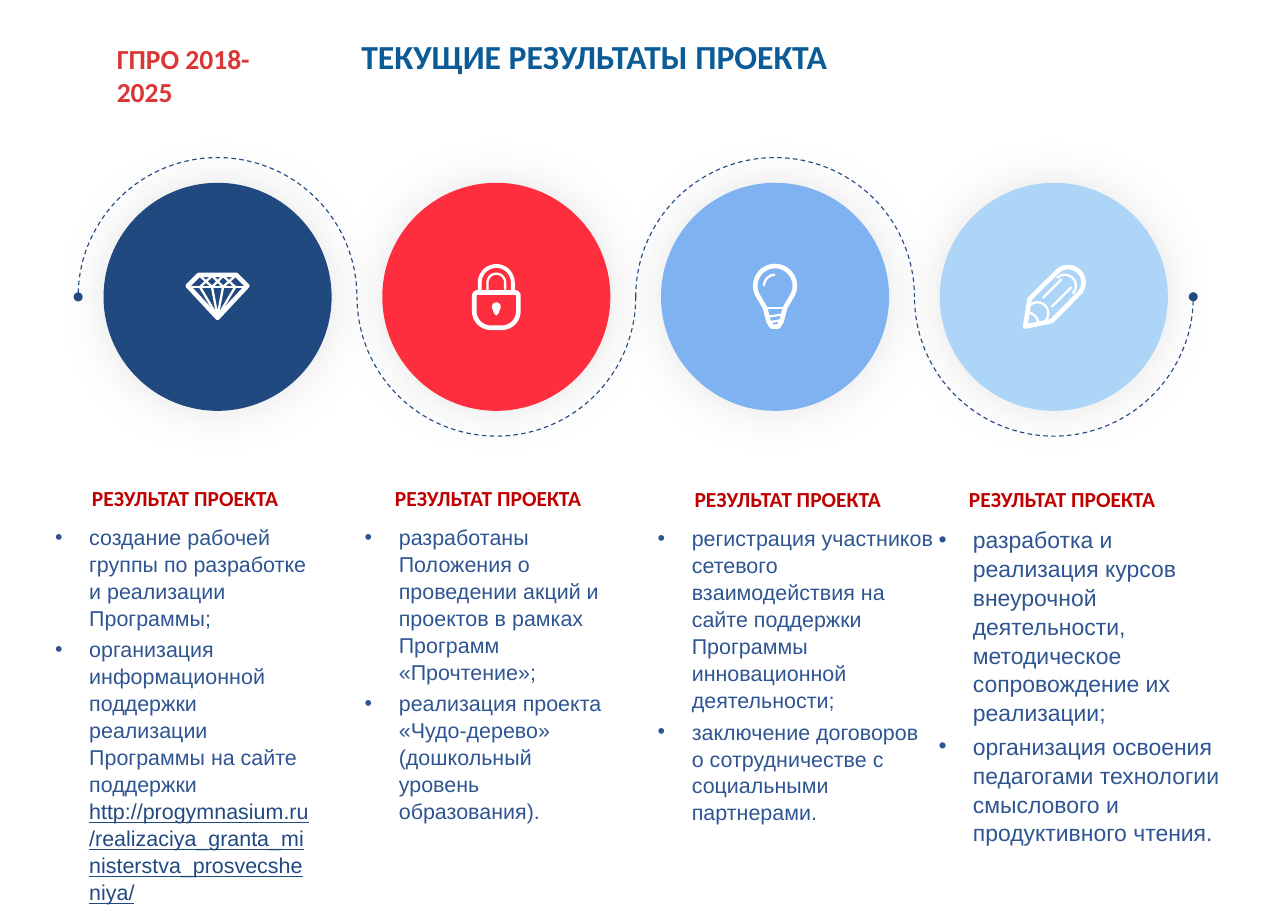
from math import cos, radians, sin

from lxml import etree
from pptx import Presentation
from pptx.dml.color import RGBColor
from pptx.enum.dml import MSO_LINE
from pptx.enum.shapes import MSO_SHAPE
from pptx.enum.text import MSO_ANCHOR, PP_ALIGN
from pptx.oxml.ns import qn
from pptx.util import Inches, Pt

ARC, OVAL = MSO_SHAPE.ARC, MSO_SHAPE.OVAL
DASH = MSO_LINE.DASH
LEFT, CENTER = PP_ALIGN.LEFT, PP_ALIGN.CENTER
TOP, MIDDLE = MSO_ANCHOR.TOP, MSO_ANCHOR.MIDDLE

WHITE = RGBColor(0xFF, 0xFF, 0xFF)
RED = RGBColor(0xD9, 0x36, 0x35)
DARK_RED = RGBColor(0xC0, 0x00, 0x00)
TITLE_BLUE = RGBColor(0x0B, 0x5B, 0x97)
TEXT_BLUE = RGBColor(0x2E, 0x55, 0x92)
LINE_BLUE = RGBColor(0x1D, 0x47, 0x7F)
NAVY = RGBColor(0x20, 0x49, 0x7F)
CORAL = RGBColor(0xFE, 0x2E, 0x3E)
BLUE = RGBColor(0x7F, 0xB2, 0xF0)
PALE_BLUE = RGBColor(0xAD, 0xD5, 0xF7)
SHADOW = RGBColor(0xBF, 0xBF, 0xBF)

PITCH = 2.53
CIRCLE = 2.07
THICK, MEDIUM, THIN = 3, 2.5, 1.5
URL = "http://progymnasium.ru/realizaciya_granta_ministerstva_prosvecsheniya/"

COLUMNS = [
    (0.39, 4.35, 2.53, 2.54, 0.31, 14, [
        "создание рабочей группы по разработке и реализации Программы;",
        "организация информационной поддержки реализации Программы на сайте поддержки " + URL]),
    (3.14, 4.35, 2.51, 3.06, 0.37, 14, [
        "разработаны Положения о проведении акций и проектов в рамках Программ «Прочтение»;",
        "реализация проекта «Чудо-дерево» (дошкольный уровень образования)."]),
    (5.86, 4.36, 2.73, 2.45, 0.31, 14, [
        "регистрация участников сетевого взаимодействия на сайте поддержки Программы "
        "инновационной деятельности;",
        "заключение договоров о сотрудничестве с социальными партнерами."]),
    (8.35, 4.36, 2.89, 2.69, 0.37, 15, [
        "разработка и реализация курсов внеурочной деятельности, методическое "
        "сопровождение их реализации;",
        "организация освоения педагогами технологии смыслового и продуктивного чтения."]),
]


def curve(x, y, radius, start, end, steps=24):
    """Return points along a circular arc, with angles clockwise from the right."""
    angles = [radians(start + (end - start) * step / steps) for step in range(steps + 1)]
    return [(x + radius * cos(angle), y + radius * sin(angle)) for angle in angles]


def diamond():
    """Return the strokes of the diamond as points, width and closed flag."""
    crown = [(-0.16, -0.19), (-0.05, -0.09), (0.05, -0.19), (0.16, -0.09)]
    return [
        ([(-0.27, -0.1), (-0.17, -0.2), (0.17, -0.2), (0.27, -0.1), (0, 0.19)], THICK, True),
        ([(-0.25, -0.09), (0.25, -0.09)], THIN, False),
        (crown, THIN, False),
        ([(-x, y) for x, y in crown], THIN, False),
        *[([(-x, -0.09), (0, 0.18), (x, -0.09)], THIN, False) for x in (0.05, 0.16)],
    ]


def padlock():
    """Return the strokes of the padlock."""
    body = (curve(-0.17, -0.01, 0.03, 180, 270) + curve(0.17, -0.01, 0.03, 270, 360)
            + curve(0.05, 0.13, 0.15, 0, 90) + curve(-0.05, 0.13, 0.15, 90, 180))
    shackles = [([(-radius, -0.05), *curve(0, -0.13, radius, 180, 360), (radius, -0.05)], width, False)
                for radius, width in ((0.15, MEDIUM), (0.08, THIN))]
    return [(body, THICK, True), *shackles]


def keyhole():
    """Return the outline of the keyhole."""
    return curve(0, 0.09, 0.04, 160, 380) + [(0.02, 0.15), (0, 0.17), (-0.02, 0.15)]


def bulb():
    """Return the strokes of the light bulb."""
    outline = curve(0, -0.1, 0.18, 145, 395) + [
        (0.09, 0.1), (0.06, 0.22), (0.03, 0.27), (-0.03, 0.27), (-0.06, 0.22), (-0.09, 0.1)]
    return [
        (outline, THICK, True),
        (curve(0, -0.1, 0.1, 180, 270), THIN, False),
        ([(-0.09, 0.1), (0.09, 0.1)], THIN, False),
        ([(-0.07, 0.18), (0.07, 0.16)], THIN, False),
        ([(-0.05, 0.23), (0.06, 0.21)], THIN, False),
    ]


def pencil():
    """Return the strokes of the pencil."""
    outline = curve(0.13, -0.13, 0.14, 225, 405) + [(-0.02, 0.22), (-0.26, 0.27), (-0.22, 0.02)]
    return [
        (outline, THICK, True),
        (curve(0.1, -0.1, 0.1, 225, 405), THIN, False),
        (curve(-0.15, 0.15, 0.1, 225, 405), THIN, False),
        (curve(-0.25, 0.25, 0.11, 270, 360), THIN, False),
        ([(-0.1, 0.01), (0.07, -0.16)], THIN, False),
        ([(-0.02, 0.09), (0.16, -0.09)], THIN, False),
    ]


def add_outline(slide, x, y, points, closed):
    """Draw a freeform from points around a centre."""
    places = [(Inches(x + dx), Inches(y + dy)) for dx, dy in points]
    builder = slide.shapes.build_freeform(*places[0], scale=1.0)
    builder.add_line_segments(places[1:], close=closed)
    shape = builder.convert_to_shape()
    shape.shadow.inherit = False
    return shape


def add_icon(slide, x, y, strokes):
    """Draw white strokes around a centre."""
    for points, width, closed in strokes:
        shape = add_outline(slide, x, y, points, closed)
        shape.fill.background()
        shape.line.color.rgb = WHITE
        shape.line.width = Pt(width)


def add_wave(slide, x, y, count):
    """Draw the dashed wave of half circles, dotted at both ends."""
    for index in range(count):
        shape = slide.shapes.add_shape(
            ARC, Inches(x + index * PITCH), Inches(y), Inches(PITCH), Inches(PITCH))
        shape.adjustments[0], shape.adjustments[1] = 162, 54
        shape.rotation = 90 if index % 2 else 270
        shape.shadow.inherit = False
        shape.fill.background()
        shape.line.color.rgb = LINE_BLUE
        shape.line.width = Pt(0.75)
        shape.line.dash_style = DASH
        if index in (0, count - 1):
            etree.SubElement(shape.line._get_or_add_ln(), qn("a:headEnd"), type="oval")


def add_circle(slide, x, y, color):
    """Draw a filled circle with a soft glow-like shadow around a centre."""
    shape = slide.shapes.add_shape(
        OVAL, Inches(x - CIRCLE / 2), Inches(y - CIRCLE / 2), Inches(CIRCLE), Inches(CIRCLE))
    shape.fill.solid()
    shape.fill.fore_color.rgb = color
    shape.line.fill.background()
    shape.shadow.inherit = False
    effects = shape._element.spPr.find(qn("a:effectLst"))
    shadow = etree.SubElement(effects, qn("a:outerShdw"), blurRad=str(Pt(30)), dist="0",
                              algn="ctr", rotWithShape="0")
    tint = etree.SubElement(shadow, qn("a:srgbClr"), val=str(SHADOW))
    etree.SubElement(tint, qn("a:alpha"), val="40000")


def add_run(paragraph, text, size, color, font="Calibri", bold=False, underline=None):
    """Add a formatted run to a paragraph."""
    run = paragraph.add_run()
    run.text = text
    run.font.name, run.font.size = font, Pt(size)
    run.font.bold, run.font.underline = bold, underline
    run.font.color.rgb = color


def prepare_frame(shape, anchor=TOP, wrap=True):
    """Set wrapping, anchor and margins, and return the text frame."""
    frame = shape.text_frame
    frame.word_wrap, frame.vertical_anchor = wrap, anchor
    frame.margin_left = frame.margin_right = Inches(0.11)
    frame.margin_top = frame.margin_bottom = Inches(0.05)
    return frame


def add_label(slide, box, text, size, color, align=LEFT, wrap=True):
    """Add a bold one-line text box."""
    frame = prepare_frame(slide.shapes.add_textbox(*map(Inches, box)), wrap=wrap)
    frame.paragraphs[0].alignment = align
    add_run(frame.paragraphs[0], text, size, color, bold=True)


def add_header(slide):
    """Place the programme label and the slide title."""
    add_label(slide, (0.95, 0.33, 1.92, 0.4), "ГПРО 2018-2025", 18, RED, wrap=False)
    title = slide.shapes.title
    title.left, title.top, title.width, title.height = map(Inches, (3.17, 0, 8.35, 1.02))
    paragraph = prepare_frame(title, MIDDLE).paragraphs[0]
    paragraph.alignment = LEFT
    add_run(paragraph, "ТЕКУЩИЕ РЕЗУЛЬТАТЫ ПРОЕКТА", 22, TITLE_BLUE, bold=True)


def add_column(slide, x, y, width, height, indent, size, items):
    """Place a heading with its bulleted results below it."""
    add_label(slide, (x, y, 2.58, 0.35), "РЕЗУЛЬТАТ ПРОЕКТА", 14, DARK_RED, CENTER)
    frame = prepare_frame(slide.shapes.add_textbox(*map(Inches, (x, y + 0.35, width, height))))
    for index, item in enumerate(items):
        paragraph = frame.add_paragraph() if index else frame.paragraphs[0]
        properties = paragraph._p.get_or_add_pPr()
        properties.set("marL", str(Inches(indent)))
        properties.set("indent", str(-Inches(0.31)))
        etree.SubElement(properties, qn("a:buFont"), typeface="Arial")
        etree.SubElement(properties, qn("a:buChar"), char="•")
        paragraph.line_spacing = 1.05
        paragraph.space_before = Pt(0.2 * size if index else 0)
        text, link, _ = item.partition(URL)
        add_run(paragraph, text, size, TEXT_BLUE, "Arial")
        if link:
            add_run(paragraph, link, size, NAVY, "Arial", underline=True)


def add_chain(slide, x, y):
    """Place the wave and its four circles with icons."""
    add_wave(slide, x, y, 4)
    center_y = y + PITCH / 2
    stages = [(NAVY, diamond), (CORAL, padlock), (BLUE, bulb), (PALE_BLUE, pencil)]
    for index, (color, icon) in enumerate(stages):
        center_x = x + PITCH * (index + 0.5)
        add_circle(slide, center_x, center_y, color)
        add_icon(slide, center_x, center_y, icon())
        if icon is padlock:
            shape = add_outline(slide, center_x, center_y, keyhole(), True)
            shape.fill.solid()
            shape.fill.fore_color.rgb = WHITE
            shape.line.fill.background()


def main():
    """Build the slide and save it."""
    presentation = Presentation()
    presentation.slide_width, presentation.slide_height = Inches(11.69), Inches(8.27)
    slide = presentation.slides.add_slide(presentation.slide_layouts[5])
    add_header(slide)
    add_chain(slide, 0.71, 1.43)
    for column in COLUMNS:
        add_column(slide, *column)
    presentation.save("out.pptx")


if __name__ == "__main__":
    main()
